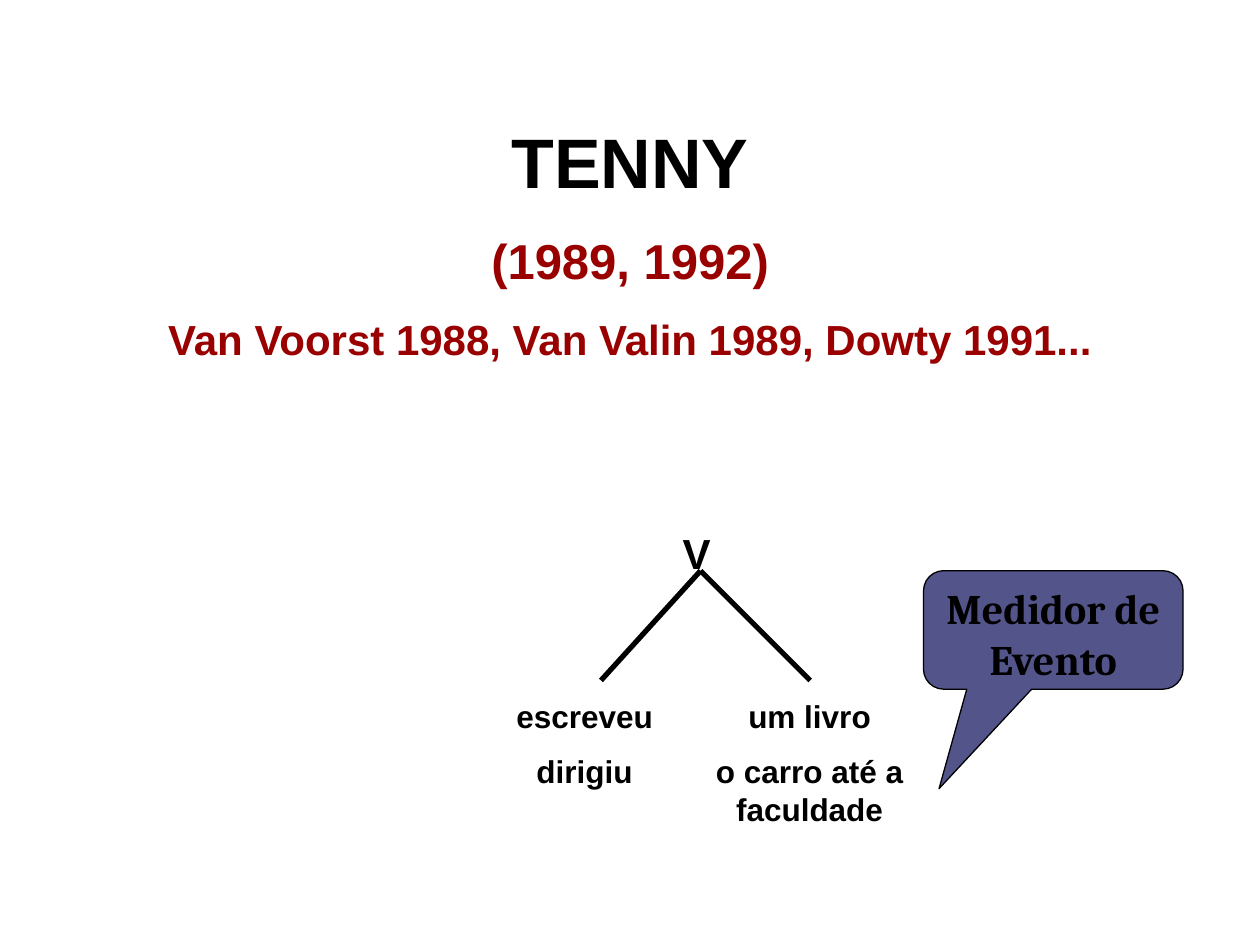
"""Build the Tenny slide: a heading, a small verb tree and an event callout."""
import dataclasses

import pptx
import pptx.dml.color
import pptx.enum.shapes
import pptx.enum.text
import pptx.oxml.ns
import pptx.util
from lxml import etree
from pptx.util import Inches


@dataclasses.dataclass(frozen=True)
class Theme:
    font: str = "Arial"
    callout_font: str = "Cambria"
    ink: str = "000000"
    accent: str = "990000"
    callout_fill: str = "53548A"
    title: int = 40
    years: int = 28
    body: int = 24
    leaf: int = 18
    first_gap: float = 0.07
    gap: float = 0.57


theme = Theme()
LEFT = pptx.enum.text.PP_ALIGN.LEFT
CENTER = pptx.enum.text.PP_ALIGN.CENTER


def rgb(value):
    return pptx.dml.color.RGBColor.from_string(value)


def write(tf, text, size, color=theme.ink, font=theme.font, align=CENTER):
    first = not tf.text
    p = tf.paragraphs[0] if first else tf.add_paragraph()
    p.alignment = align
    p.space_before = pptx.util.Pt(round(size * (theme.first_gap if first else theme.gap), 1))
    r = p.add_run()
    r.text = text
    r.font.name = font
    r.font.size = pptx.util.Pt(size)
    r.font.bold = True
    r.font.color.rgb = rgb(color)
    tf.word_wrap = True
    tf.vertical_anchor = pptx.enum.text.MSO_ANCHOR.TOP


prs = pptx.Presentation()
prs.slide_width, prs.slide_height = Inches(10), Inches(7.5)
s = prs.slides.add_slide(prs.slide_layouts[5])

title = s.shapes.title
title.left, title.top = Inches(0), Inches(0.89)
title.width, title.height = Inches(10), Inches(2.07)
title.text_frame.auto_size = pptx.enum.text.MSO_AUTO_SIZE.NONE
write(title.text_frame, "TENNY", theme.title)
write(title.text_frame, "(1989, 1992)", theme.years, color=theme.accent)
write(title.text_frame, "Van Voorst 1988, Van Valin 1989, Dowty 1991...", theme.body, color=theme.accent)

for branch_x in (4.77, 6.43):
    branch = s.shapes.add_connector(
        pptx.enum.shapes.MSO_CONNECTOR.STRAIGHT,
        Inches(5.56), Inches(4.53), Inches(branch_x), Inches(5.4))
    branch.line.color.rgb = rgb(theme.ink)
    branch.line.width = pptx.util.Pt(3)
    etree.SubElement(branch._element.spPr, pptx.oxml.ns.qn("a:effectLst"))

nodes = [
    ((5.32, 4.14, 0.78, 0.5), ["V"], theme.body, LEFT),
    ((5.52, 5.48, 1.81, 1.15), ["um livro", "o carro até a faculdade"], theme.leaf, CENTER),
    ((3.99, 5.48, 1.3, 0.85), ["escreveu", "dirigiu"], theme.leaf, CENTER),
]
for box, lines, size, align in nodes:
    node = s.shapes.add_textbox(*map(Inches, box))
    for line in lines:
        write(node.text_frame, line, size, align=align)

callout = s.shapes.add_shape(
    pptx.enum.shapes.MSO_SHAPE.ROUNDED_RECTANGULAR_CALLOUT,
    Inches(7.33), Inches(4.53), Inches(2.06), Inches(0.94))
for i, value in enumerate((-0.44, 1.34, 0.17)):
    callout.adjustments[i] = value
callout.shadow.inherit = False
callout.fill.solid()
callout.fill.fore_color.rgb = rgb(theme.callout_fill)
callout.line.color.rgb = rgb(theme.ink)
callout.line.width = pptx.util.Pt(0.75)
write(callout.text_frame, "Medidor de Evento", theme.body, font=theme.callout_font)

prs.save("out.pptx")
